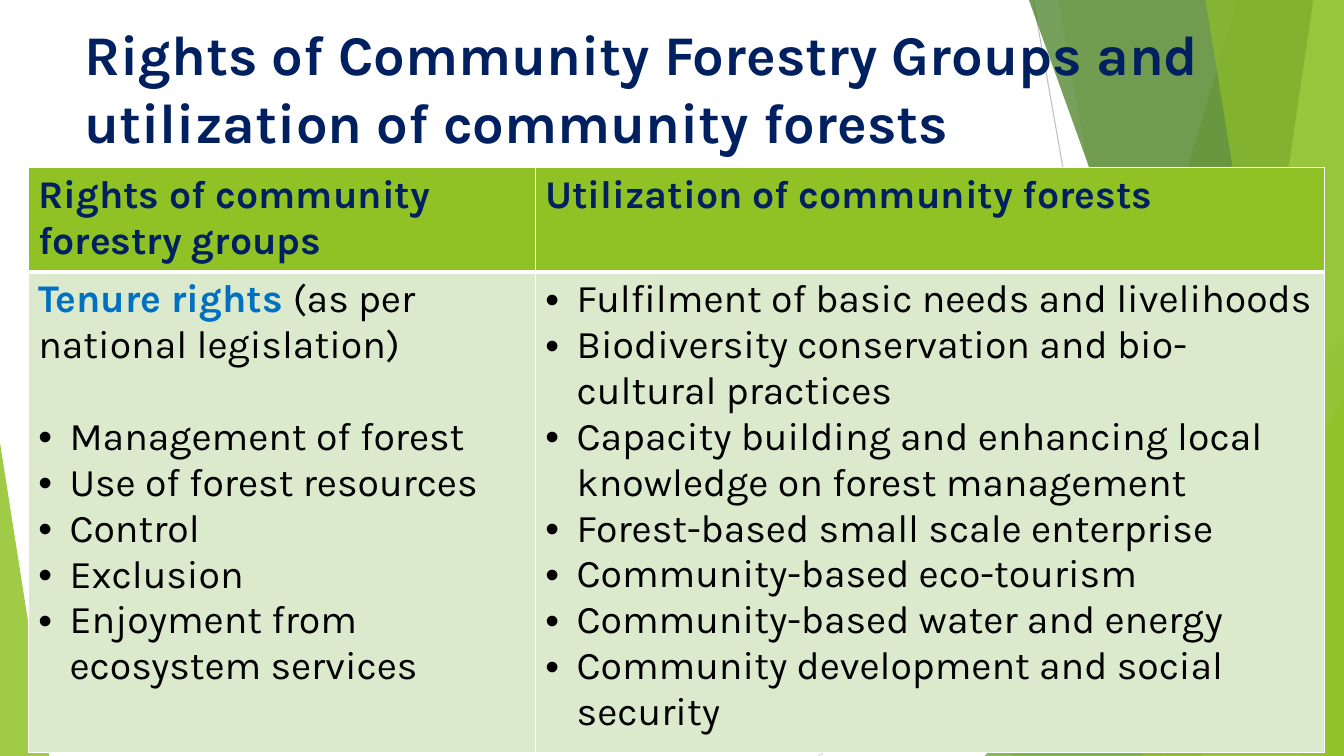
from lxml.etree import SubElement
from pptx import Presentation
from pptx.dml.color import RGBColor
from pptx.enum.shapes import MSO_CONNECTOR, MSO_SHAPE
from pptx.enum.text import MSO_ANCHOR
from pptx.oxml import parse_xml
from pptx.oxml.ns import nsdecls, qn
from pptx.util import Cm, Pt

WHITE = RGBColor(0xFF, 0xFF, 0xFF)
BLACK = RGBColor(0x00, 0x00, 0x00)
NAVY = RGBColor(0x00, 0x20, 0x60)
BLUE = RGBColor(0x00, 0x70, 0xC0)
GRAY = RGBColor(0xBF, 0xBF, 0xBF)
LIGHT_GRAY = RGBColor(0xD9, 0xD9, 0xD9)
GREEN = RGBColor(0x90, 0xC2, 0x26)
MID_GREEN = RGBColor(0x54, 0xA0, 0x21)
DARK_GREEN = RGBColor(0x3F, 0x78, 0x19)
LIME = RGBColor(0xC0, 0xE4, 0x74)
PALE_GREEN = RGBColor(0xDB, 0xE9, 0xCD)

WIDTH, HEIGHT = 33.87, 19.05
INDENT = Cm(0.79)
BODY_SIZE = Pt(28)

TITLE_FORMAT = {"name": "Karla", "size": Pt(40), "bold": True}
HEADING_FORMAT = {"name": "Karla", "size": BODY_SIZE, "bold": True}
BODY_FORMAT = {"name": "Karla", "size": BODY_SIZE, "bold": False}

HEADINGS = ["Rights of community forestry groups", "Utilization of community forests"]
RIGHTS = [
    "Management of forest",
    "Use of forest resources",
    "Control",
    "Exclusion",
    "Enjoyment from ecosystem services",
]
UTILIZATION = [
    "Fulfilment of basic needs and livelihoods",
    "Biodiversity conservation and bio-cultural practices",
    "Capacity building and enhancing local knowledge on forest management",
    "Forest-based small scale enterprise",
    "Community-based eco-tourism",
    "Community-based water and energy",
    "Community development and social security",
]


def add_line(slide, start, end, color):
    ends = [Cm(value) for value in (*start, *end)]
    line = slide.shapes.add_connector(MSO_CONNECTOR.STRAIGHT, *ends)
    line.line.color.rgb = color
    line.line.width = Pt(0.75)
    SubElement(line.element.spPr, qn("a:effectLst"))


def fill_translucent(shape, color, opacity):
    """Fill a borderless shape; opacity is in percent."""
    shape.shadow.inherit = False
    shape.line.fill.background()
    shape.fill.solid()
    shape.fill.fore_color.rgb = color
    color_element = shape.element.spPr.find(qn("a:solidFill"))[0]
    SubElement(color_element, qn("a:alpha"), val=str(opacity * 1000))


def add_band(slide, top_x, bottom_x, color, opacity):
    """Add a full-height band from a slanted left edge to the slide's right edge."""
    builder = slide.shapes.build_freeform(Cm(top_x), 0)
    corners = [(WIDTH, 0), (WIDTH, HEIGHT), (bottom_x, HEIGHT)]
    builder.add_line_segments([(Cm(x), Cm(y)) for x, y in corners], close=True)
    fill_translucent(builder.convert_to_shape(), color, opacity)


def add_corner(slide, left, top, width, apex, color, opacity):
    """Add a triangle that stands on the slide's bottom edge."""
    box = [Cm(value) for value in (left, top, width, HEIGHT - top)]
    shape = slide.shapes.add_shape(MSO_SHAPE.ISOSCELES_TRIANGLE, *box)
    shape.adjustments[0] = apex
    fill_translucent(shape, color, opacity)


def add_run(paragraph, text, font_format, color):
    run = paragraph.add_run()
    run.text = text
    for name, value in font_format.items():
        setattr(run.font, name, value)
    run.font.color.rgb = color


def add_title(slide, text):
    box = slide.shapes.add_textbox(Cm(1.88), Cm(0.38), Cm(30.91), Cm(3.48))
    box.text_frame.word_wrap = True
    box.text_frame.vertical_anchor = MSO_ANCHOR.TOP
    add_run(box.text_frame.paragraphs[0], text, TITLE_FORMAT, NAVY)


def add_bullet(paragraph, text):
    properties = paragraph._p.get_or_add_pPr()
    properties.set("marL", str(INDENT))
    properties.set("indent", str(-INDENT))
    SubElement(properties, qn("a:buFont"), typeface="Arial")
    SubElement(properties, qn("a:buChar"), char="•")
    add_run(paragraph, text, BODY_FORMAT, BLACK)


def style_cell(cell, color, top_width, bottom_width):
    """Fill a cell and give it white borders; widths are in points."""
    cell.fill.solid()
    cell.fill.fore_color.rgb = color
    properties = cell._tc.get_or_add_tcPr()
    borders = {"lnL": 1, "lnR": 1, "lnT": top_width, "lnB": bottom_width}
    for position, (tag, width) in enumerate(borders.items()):
        border = parse_xml(
            f'<a:{tag} {nsdecls("a")} w="{Pt(width)}"><a:solidFill>'
            f'<a:srgbClr val="{WHITE}"/></a:solidFill></a:{tag}>'
        )
        properties.insert(position, border)


def add_rights_table(slide):
    frame = slide.shapes.add_table(2, 2, Cm(0.71), Cm(4.22), Cm(32.66), Cm(14.37))
    table = frame.table
    table.first_row = table.horz_banding = False
    for column, width in zip(table.columns, (12.78, 19.88)):
        column.width = Cm(width)
    for row, height in zip(table.rows, (2.57, 11.8)):
        row.height = Cm(height)

    for column, heading in enumerate(HEADINGS):
        header, body = table.cell(0, column), table.cell(1, column)
        style_cell(header, GREEN, 1, 3)
        style_cell(body, PALE_GREEN, 3, 1)
        add_run(header.text_frame.paragraphs[0], heading, HEADING_FORMAT, NAVY)

    rights = table.cell(1, 0).text_frame
    introduction = rights.paragraphs[0]
    add_run(introduction, "Tenure rights ", HEADING_FORMAT, BLUE)
    add_run(introduction, "(as per national legislation)", BODY_FORMAT, BLACK)
    introduction.space_after = Pt(32.8)
    for text in RIGHTS:
        add_bullet(rights.add_paragraph(), text)

    utilization = table.cell(1, 1).text_frame
    add_bullet(utilization.paragraphs[0], UTILIZATION[0])
    for text in UTILIZATION[1:]:
        add_bullet(utilization.add_paragraph(), text)


def add_background(slide):
    add_line(slide, (26.04, 0), (29.41, HEIGHT), GRAY)
    add_line(slide, (WIDTH, 10.24), (20.62, HEIGHT), LIGHT_GRAY)
    add_band(slide, 31.19, 25.5, GREEN, 30)
    add_band(slide, 26.67, 30.05, GREEN, 20)
    add_corner(slide, 24.82, 8.46, 9.05, 1, MID_GREEN, 72)
    add_band(slide, 25.93, 32.79, DARK_GREEN, 70)
    add_band(slide, 33.1, 30.28, LIME, 70)
    add_band(slide, 30.38, 33.48, GREEN, 65)
    add_corner(slide, 28.8, 9.98, 5.07, 1, GREEN, 80)
    add_corner(slide, 0, 11.15, 1.24, 0, GREEN, 85)


def main():
    presentation = Presentation()
    presentation.slide_width = Cm(WIDTH)
    presentation.slide_height = Cm(HEIGHT)
    slide = presentation.slides.add_slide(presentation.slide_layouts[6])
    add_background(slide)
    add_title(
        slide, "Rights of Community Forestry Groups and utilization of community forests"
    )
    add_rights_table(slide)
    presentation.save("out.pptx")


if __name__ == "__main__":
    main()
